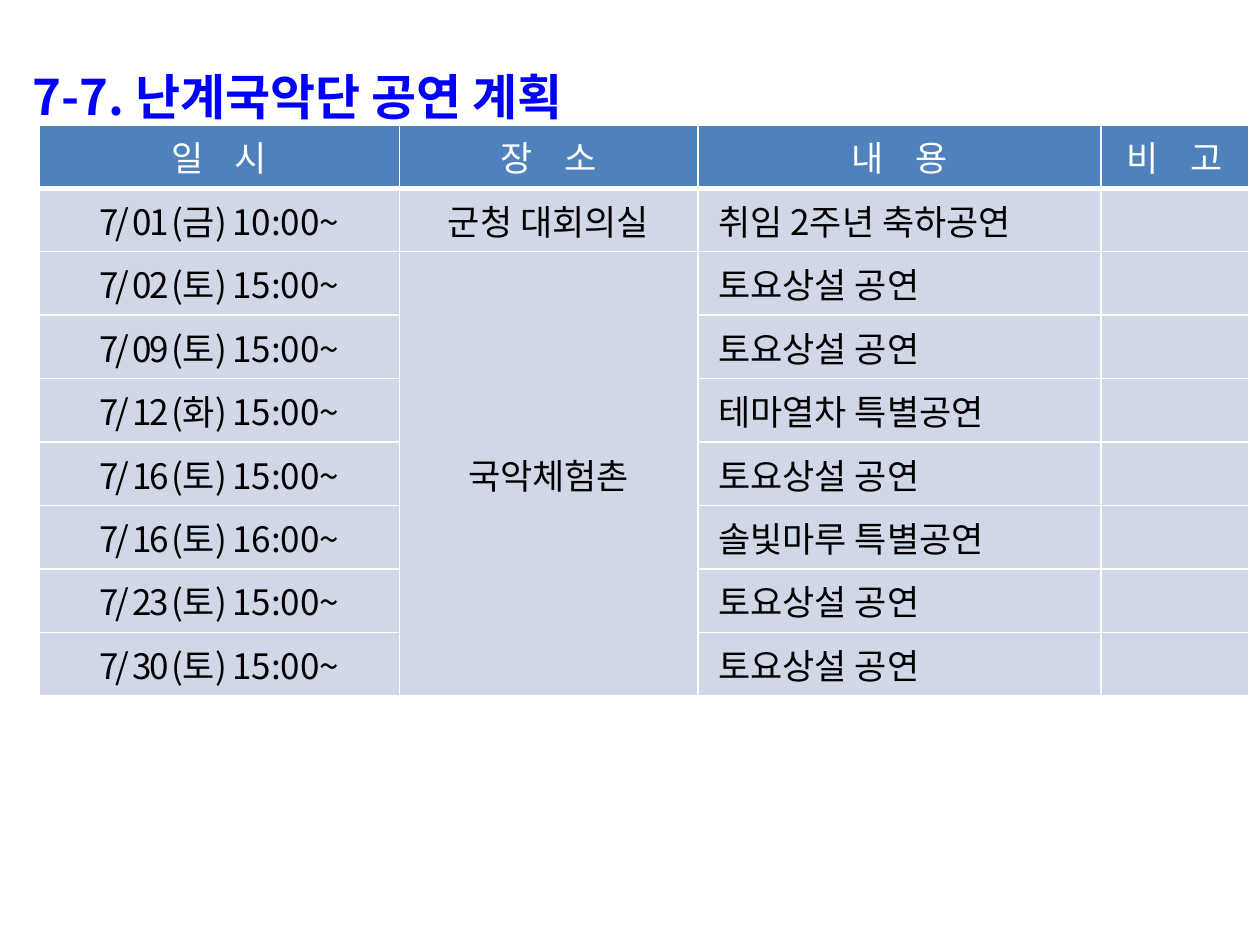
from lxml import etree
from pptx import Presentation
from pptx.dml.color import RGBColor
from pptx.enum.text import MSO_ANCHOR as ANCHOR, PP_ALIGN as ALIGN
from pptx.oxml.ns import qn
from pptx.util import Inches, Pt

FONT = "Noto Sans CJK KR"
WHITE = RGBColor(0xFF, 0xFF, 0xFF)
BLACK = RGBColor(0x00, 0x00, 0x00)
TITLE_BLUE = RGBColor(0x00, 0x00, 0xFF)
HEAD_FILL = RGBColor(0x4F, 0x81, 0xBD)
BODY_FILL = RGBColor(0xD0, 0xD8, 0xE8)
TITLE_FMT = {"size": Pt(28), "bold": True, "name": FONT}
HEAD_FMT = {"size": Pt(20), "bold": False, "name": FONT}
BODY_FMT = HEAD_FMT


def add_run(p, text, fmt, color, spacing=0):
    """Add a run; spacing is the letter spacing in points."""
    r = p.add_run()
    r.text = text
    for key, value in fmt.items():
        setattr(r.font, key, value)
    r.font.color.rgb = color
    rPr = r.font._element
    etree.SubElement(rPr, qn("a:ea"), typeface=FONT)
    if spacing:
        rPr.set("spc", str(round(spacing * 100)))


def set_borders(cell, widths):
    """Draw white borders; widths maps a side to points."""
    tcPr = cell._tc.get_or_add_tcPr()
    for i, (side, width) in enumerate(widths.items()):
        ln = etree.Element(qn("a:ln" + side), w=str(Pt(width)))
        fill = etree.SubElement(ln, qn("a:solidFill"))
        etree.SubElement(fill, qn("a:srgbClr"), val=str(WHITE))
        tcPr.insert(i, ln)


prs = Presentation()
prs.slide_width, prs.slide_height = Inches(10), Inches(7.5)
s = prs.slides.add_slide(prs.slide_layouts[6])

# Performance table
HEADS = ["일 시", "장 소", "내 용", "비 고"]
REGULAR = "토요상설 공연"
SHOWS = [
    ("7/ 01 (금) ", "10:00~", "취임 2주년 축하공연"),
    ("7/ 02 (토) ", "15:00~", REGULAR),
    ("7/ 09 (토) ", "15:00~", REGULAR),
    ("7/ 12 (화) ", "15:00~", "테마열차 특별공연"),
    ("7/ 16 (토) ", "15:00~", REGULAR),
    ("7/ 16 (토) ", "16:00~", "솔빛마루 특별공연"),
    ("7/ 23 (토) ", "15:00~", REGULAR),
    ("7/ 30 (토) ", "15:00~", REGULAR),
]
VENUES = {1: "군청 대회의실", 2: "국악체험촌"}
COLS = [2.86, 2.37, 3.2, 1.17]
ROW = 0.5
n_rows = len(SHOWS) + 1

frame = s.shapes.add_table(n_rows, len(COLS), Inches(0.31), Inches(0.99),
                           Inches(sum(COLS)), Inches(ROW * n_rows))
table = frame.table
for col, width in zip(table.columns, COLS):
    col.width = Inches(width)
for row in table.rows:
    row.height = Inches(ROW)

# Fills, borders and alignment
for y in range(n_rows):
    for x in range(len(COLS)):
        cell = table.cell(y, x)
        set_borders(cell, {"L": 1, "R": 1, "T": 3 if y == 1 else 1,
                           "B": 3 if y == 0 else 1})
        cell.fill.solid()
        cell.fill.fore_color.rgb = BODY_FILL if y else HEAD_FILL
        cell.vertical_anchor = ANCHOR.MIDDLE
        centred = y == 0 or x < 2
        cell.text_frame.paragraphs[0].alignment = ALIGN.CENTER if centred else ALIGN.LEFT

# Header words, with the gap widened by letter spacing
for x, head in enumerate(HEADS):
    p = table.cell(0, x).text_frame.paragraphs[0]
    add_run(p, head[:-1], HEAD_FMT, WHITE, 6.75)
    add_run(p, head[-1], HEAD_FMT, WHITE)

# Dates and programmes
for y, (day, time, show) in enumerate(SHOWS, 1):
    p = table.cell(y, 0).text_frame.paragraphs[0]
    add_run(p, day, BODY_FMT, BLACK, -1.5)
    add_run(p, time, BODY_FMT, BLACK)
    cell = table.cell(y, 2)
    cell.margin_left = Inches(0.16)
    add_run(cell.text_frame.paragraphs[0], show, BODY_FMT, BLACK)

# Venues, the second one spanning all later dates
table.cell(2, 1).merge(table.cell(n_rows - 1, 1))
for y, venue in VENUES.items():
    add_run(table.cell(y, 1).text_frame.paragraphs[0], venue, BODY_FMT, BLACK)

# Title
sp = s.shapes.add_textbox(Inches(0.16), Inches(0.29), Inches(9.61), Inches(2.81))
tf = sp.text_frame
tf.word_wrap = True
p = tf.paragraphs[0]
p.line_spacing = 1.4
add_run(p, "7-7. 난계국악단 공연 계획", TITLE_FMT, TITLE_BLUE)

prs.save("out.pptx")
